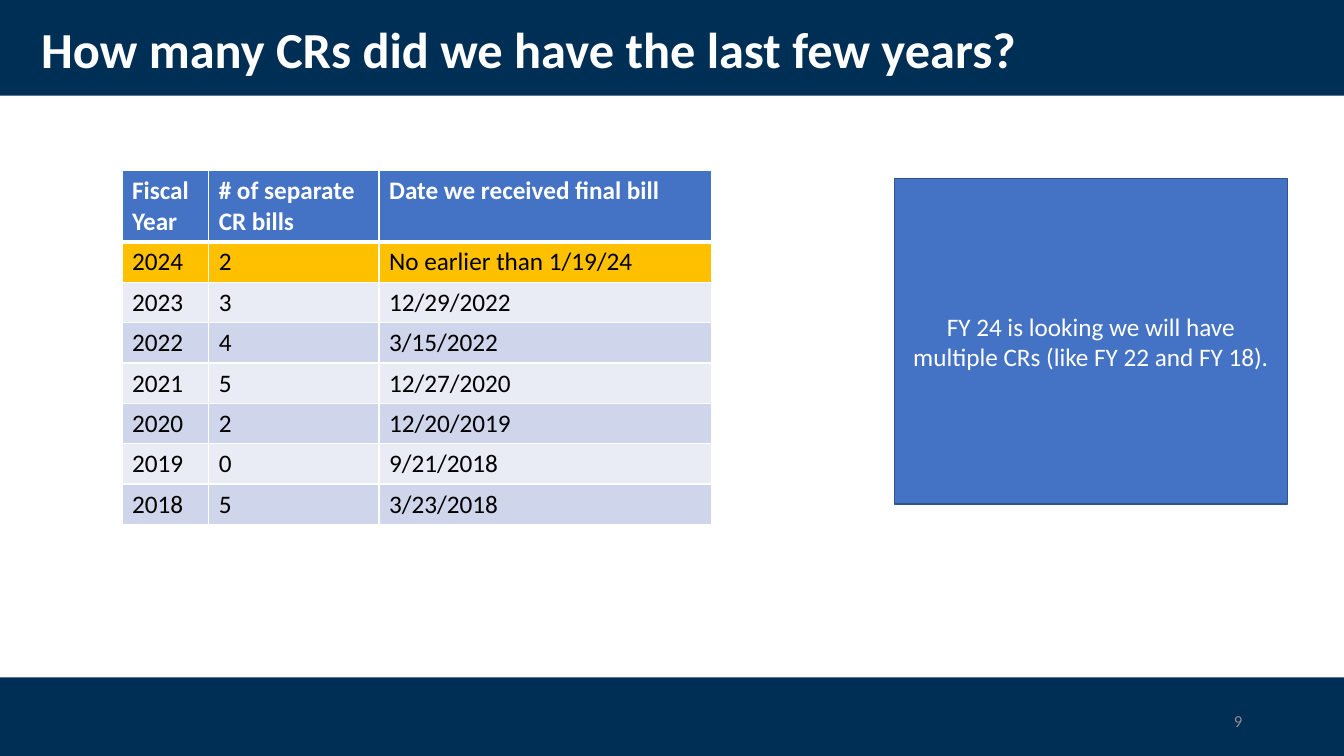
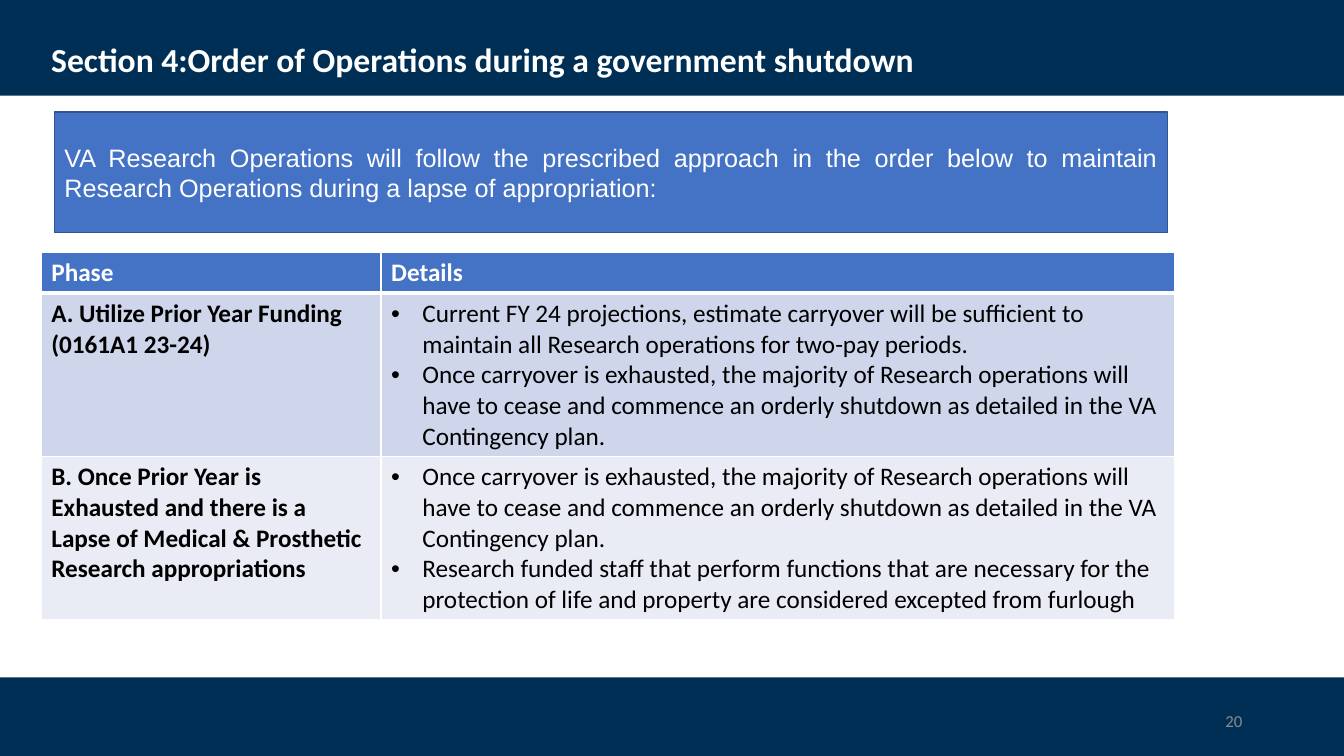
from lxml import etree
from pptx import Presentation
from pptx import util as u
from pptx.dml.color import RGBColor
from pptx.enum import shapes, text
from pptx.oxml import ns

PX = 9144  # EMU in one px, at 100 px to the inch
SLIDE_W, SLIDE_H = 1333, 750
COLORS = {
    "navy": "002F56",
    "blue": "4472C4",
    "blue_edge": "325491",
    "gold": "FFC000",
    "band_odd": "CFD5EA",
    "band_even": "E9EBF5",
    "white": "FFFFFF",
    "black": "000000",
    "gray": "8C8C8C",
}
BULLET_INDENT = 31

CR_ROWS = [
    ("Fiscal Year", "# of separate CR bills", "Date we received final bill"),
    ("2024", "2", "No earlier than 1/19/24"),
    ("2023", "3", "12/29/2022"),
    ("2022", "4", "3/15/2022"),
    ("2021", "5", "12/27/2020"),
    ("2020", "2", "12/20/2019"),
    ("2019", "0", "9/21/2018"),
    ("2018", "5", "3/23/2018"),
]
EXHAUSTED = ("Once carryover is exhausted, the majority of Research operations will "
             "have to cease and commence an orderly shutdown as detailed in the VA "
             "Contingency plan.")
PHASE_ROWS = [
    ("Phase", "Details"),
    ("A. Utilize Prior Year Funding (0161A1 23-24)",
     ["Current FY 24 projections, estimate carryover will be sufficient to "
      "maintain all Research operations for two-pay periods.", EXHAUSTED]),
    ("B. Once Prior Year is Exhausted and there is a Lapse of Medical & "
     "Prosthetic Research appropriations",
     [EXHAUSTED,
      "Research funded staff that perform functions that are necessary for the "
      "protection of life and property are considered excepted from furlough"]),
]


def rgb(name):
    return RGBColor.from_string(COLORS[name])


def emu(*lengths):
    return [length * PX for length in lengths]


def style(paragraph, size, color, bold=False, font="Calibri"):
    for run in paragraph.runs:
        run.font.name = font
        run.font.size = u.Pt(size)
        run.font.bold = bold
        run.font.color.rgb = rgb(color)


def add_rect(slide, box, fill, edge=None):
    rect = slide.shapes.add_shape(shapes.MSO_SHAPE.RECTANGLE, *emu(*box))
    rect.shadow.inherit = False
    rect.fill.solid()
    rect.fill.fore_color.rgb = rgb(fill)
    if edge:
        rect.line.color.rgb = rgb(edge)
        rect.line.width = u.Pt(1)
    else:
        rect.line.fill.background()
    return rect


def write(shape, words, align, size, color, **font):
    frame = shape.text_frame
    frame.word_wrap = True
    frame.vertical_anchor = text.MSO_ANCHOR.MIDDLE
    frame.text = words
    paragraph = frame.paragraphs[0]
    paragraph.alignment = align
    style(paragraph, size, color, **font)
    return paragraph


def add_callout(slide, box, words, align, font="Calibri"):
    callout = add_rect(slide, box, "blue", "blue_edge")
    write(callout, words, align, 18, "white", font=font)


def add_frame(deck, title, title_at, title_size, number):
    """Start a slide with its bands, title and page number."""
    slide = deck.slides.add_slide(deck.slide_layouts[6])
    add_rect(slide, (0, 0, SLIDE_W, 95), "navy")
    add_rect(slide, (0, 672, SLIDE_W, SLIDE_H - 672), "navy")
    heading = slide.shapes.add_textbox(*emu(*title_at, 1150, 68))
    paragraph = write(heading, title, text.PP_ALIGN.LEFT, title_size, "white", bold=True)
    paragraph.line_spacing = 0.9
    page = slide.shapes.add_textbox(*emu(942, 695, 300, 40))
    write(page, str(number), text.PP_ALIGN.RIGHT, 12, "gray")
    return slide


def set_borders(cell, top, bottom):
    props = cell._tc.get_or_add_tcPr()
    for side, points in (("L", 1), ("R", 1), ("T", top), ("B", bottom)):
        line = etree.SubElement(props, ns.qn("a:ln" + side), w=str(u.Pt(points)))
        fill = etree.SubElement(line, ns.qn("a:solidFill"))
        etree.SubElement(fill, ns.qn("a:srgbClr"), val=COLORS["white"])


def set_bullet(paragraph):
    props = paragraph._p.get_or_add_pPr()
    props.set("marL", str(BULLET_INDENT * PX))
    props.set("indent", str(-BULLET_INDENT * PX))
    etree.SubElement(props, ns.qn("a:buFont"), typeface="Arial")
    etree.SubElement(props, ns.qn("a:buChar"), char="•")


def fill_cell(cell, content, fill, color, bold):
    """Write a string as plain text, a list as bullets."""
    bulleted = isinstance(content, list)
    cell.text_frame.text = "\n".join(content) if bulleted else content
    for paragraph in cell.text_frame.paragraphs:
        if bulleted:
            set_bullet(paragraph)
        style(paragraph, 18, color, bold)
    cell.fill.solid()
    cell.fill.fore_color.rgb = rgb(fill)


def add_grid(slide, left, top, widths, heights, rows, highlight=None, bold_labels=False):
    """Table with a blue header, banded rows and white rules."""
    box = emu(left, top, sum(widths), sum(heights))
    table = slide.shapes.add_table(len(rows), len(widths), *box).table
    for column, width in zip(table.columns, widths):
        column.width = width * PX
    for r, (row, height) in enumerate(zip(rows, heights)):
        table.rows[r].height = height * PX
        header = r == 0
        band = "band_odd" if r % 2 else "band_even"
        fill = "blue" if header else "gold" if r == highlight else band
        for c, content in enumerate(row):
            cell = table.cell(r, c)
            set_borders(cell, top=3 if r == 1 else 1, bottom=3 if header else 1)
            fill_cell(cell, content, fill, "white" if header else "black",
                      header or (bold_labels and c == 0))


def build_history(deck):
    slide = add_frame(deck, "How many CRs did we have the last few years?",
                      (31, 18), 36, 9)
    heights = [71] + [40] * (len(CR_ROWS) - 1)
    add_grid(slide, 121, 169, [86, 169, 330], heights, CR_ROWS, highlight=1)
    add_callout(slide, (887, 177, 390, 323),
                "FY 24 is looking we will have multiple CRs (like FY 22 and FY 18).",
                text.PP_ALIGN.CENTER)


def build_shutdown(deck):
    slide = add_frame(deck, "Section 4:Order of Operations during a government shutdown",
                      (41, 27), 24, 20)
    add_grid(slide, 41, 250, [337, 787], [41, 162, 162], PHASE_ROWS, bold_labels=True)
    add_callout(slide, (54, 111, 1104, 120),
                "VA Research Operations will follow the prescribed approach in the order "
                "below to maintain Research Operations during a lapse of appropriation:",
                text.PP_ALIGN.JUSTIFY, font="Arial")


def main():
    deck = Presentation()
    deck.slide_width, deck.slide_height = emu(SLIDE_W, SLIDE_H)
    build_history(deck)
    build_shutdown(deck)
    deck.save("out.pptx")


if __name__ == "__main__":
    main()
